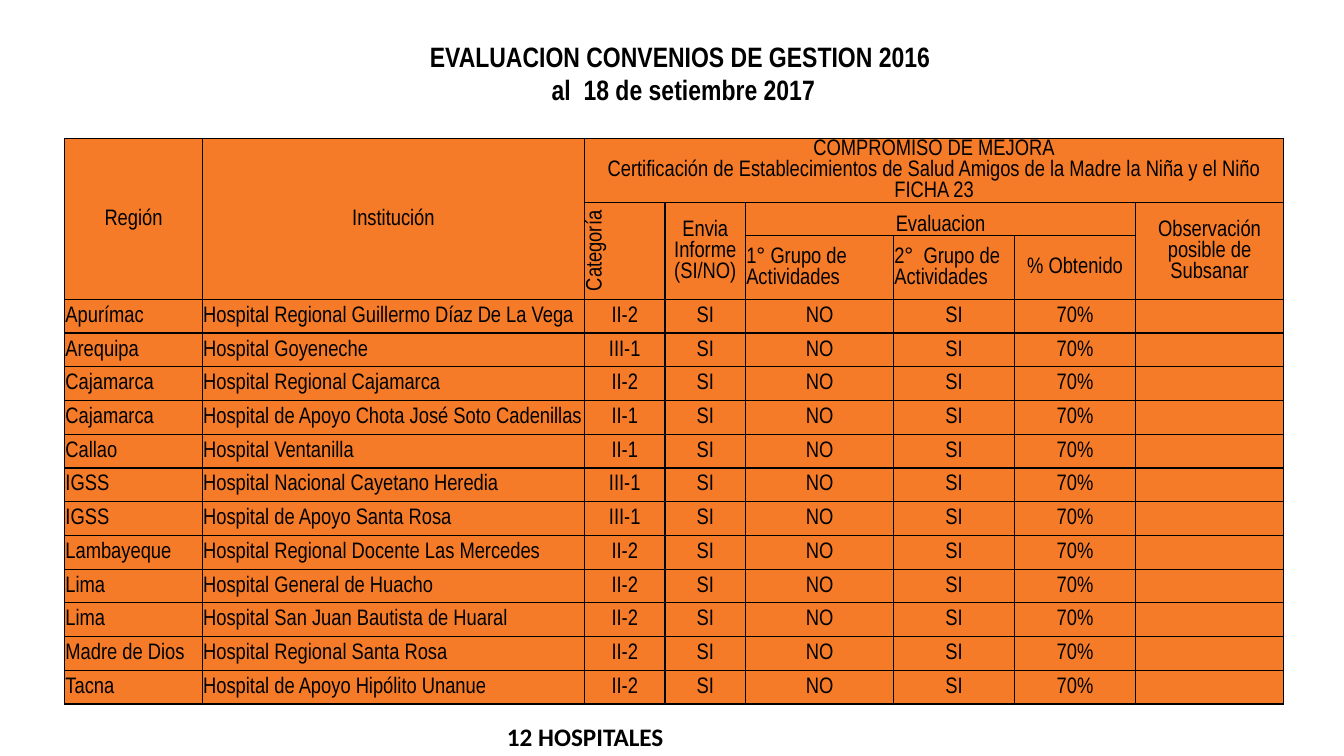
from lxml.etree import SubElement as Sub
from pptx import Presentation
from pptx.dml.color import RGBColor as Rgb
from pptx.enum.text import MSO_ANCHOR as Anchor, PP_ALIGN as Align
from pptx.oxml import parse_xml
from pptx.oxml.ns import nsdecls, qn
from pptx.util import Cm, Pt

COLORS = {"ink": "000000", "cell": "F57B28"}
NARROW = "Arial Narrow"
WIDTHS = [3.47, 9.63, 2.03, 2.03, 3.73, 3.05, 3.05, 3.73]
HEIGHTS = [1.6, 0.84, 1.6] + [0.85] * 12

# Header cells: row, column, rows spanned, columns spanned, text
HEADS = [
    (0, 0, 3, 1, "Región"),
    (0, 1, 3, 1, "Institución"),
    (0, 2, 1, 6, "COMPROMISO DE MEJORA\vCertificación de Establecimientos de Salud "
                 "Amigos de la Madre la Niña y el Niño\vFICHA 23"),
    (1, 2, 2, 1, "Categoría"),
    (1, 3, 2, 1, "Envia Informe\v(SI/NO)"),
    (1, 4, 1, 3, "Evaluacion"),
    (1, 7, 2, 1, "Observación posible de Subsanar"),
    (2, 4, 1, 1, "1° Grupo de Actividades"),
    (2, 5, 1, 1, "2°  Grupo de Actividades"),
    (2, 6, 1, 1, "% Obtenido"),
]
SITES = [
    ("Apurímac", "Hospital Regional Guillermo Díaz De La Vega", "II-2"),
    ("Arequipa", "Hospital Goyeneche", "III-1"),
    ("Cajamarca", "Hospital Regional Cajamarca", "II-2"),
    ("Cajamarca", "Hospital de Apoyo Chota José Soto Cadenillas", "II-1"),
    ("Callao", "Hospital Ventanilla", "II-1"),
    ("IGSS", "Hospital Nacional Cayetano Heredia", "III-1"),
    ("IGSS", "Hospital de Apoyo Santa Rosa", "III-1"),
    ("Lambayeque", "Hospital Regional Docente Las Mercedes", "II-2"),
    ("Lima", "Hospital General de Huacho", "II-2"),
    ("Lima", "Hospital San Juan Bautista de Huaral", "II-2"),
    ("Madre de Dios", "Hospital Regional Santa Rosa", "II-2"),
    ("Tacna", "Hospital de Apoyo Hipólito Unanue", "II-2"),
]
SCORES = ("SI", "NO", "SI", "70%", "")


def style(frame, size, font, bold=False, align=Align.CENTER):
    for para in frame.paragraphs:
        para.alignment = align
        para.line_spacing = 1.0
        para.space_before = Pt(0)
        for run in para.runs:
            run.font.size = Pt(size)
            run.font.name = font
            run.font.bold = bold
            run.font.color.rgb = Rgb.from_string(COLORS["ink"])


def place(shape, box):
    shape.left, shape.top, shape.width, shape.height = [Cm(n) for n in box]


def border(cell):
    props = cell._tc.get_or_add_tcPr()
    for spot, side in enumerate("LRTB"):
        line = parse_xml(f'<a:ln{side} {nsdecls("a")} w="12700"/>')
        fill = Sub(line, qn("a:solidFill"))
        Sub(fill, qn("a:srgbClr"), val=COLORS["ink"])
        props.insert(spot, line)


def dress(cell):
    cell.fill.solid()
    cell.fill.fore_color.rgb = Rgb.from_string(COLORS["cell"])
    cell.margin_left = cell.margin_right = cell.margin_top = Cm(0.02)
    cell.margin_bottom = 0
    cell.vertical_anchor = Anchor.MIDDLE
    border(cell)


def write(cell, text, align=Align.CENTER):
    cell.text_frame.text = text
    style(cell.text_frame, 16, NARROW, align=align)


def add_title(slide, box):
    title = slide.shapes.title
    place(title, box)
    frame = title.text_frame
    frame.text = "EVALUACION CONVENIOS DE GESTION 2016\n al  18 de setiembre 2017"
    frame.vertical_anchor = Anchor.TOP
    style(frame, 20, NARROW, bold=True)


def add_grid(slide, box):
    shape = slide.shapes.add_table(len(HEIGHTS), len(WIDTHS), *[Cm(n) for n in box])
    table = shape.table
    table.first_row = table.horz_banding = False
    for column, width in zip(table.columns, WIDTHS):
        column.width = Cm(width)
    for row, height in zip(table.rows, HEIGHTS):
        row.height = Cm(height)
    for cell in table.iter_cells():
        dress(cell)

    # Header block
    for row, col, down, across, text in HEADS:
        cell = table.cell(row, col)
        if down * across > 1:
            cell.merge(table.cell(row + down - 1, col + across - 1))
        left = text.endswith("Grupo de Actividades")
        write(cell, text, Align.LEFT if left else Align.CENTER)
        if across > 1:
            cell.vertical_anchor = Anchor.BOTTOM
        if text == "Categoría":
            cell._tc.get_or_add_tcPr().set("vert", "vert270")

    # One row per hospital
    for row, site in enumerate(SITES, 3):
        for col, text in enumerate(site + SCORES):
            write(table.cell(row, col), text, Align.LEFT if col < 2 else Align.CENTER)


def add_total(slide, box):
    frame = slide.shapes.add_textbox(*[Cm(n) for n in box]).text_frame
    frame.word_wrap = True
    frame.text = f"{len(SITES)} HOSPITALES"
    style(frame, 18, "Calibri", bold=True)


def main():
    deck = Presentation()
    deck.slide_width, deck.slide_height = Cm(33.87), Cm(19.05)
    slide = deck.slides.add_slide(deck.slide_layouts[5])
    add_title(slide, (6.93, 0.86, 20.42, 1.96))
    add_grid(slide, (1.63, 3.49, sum(WIDTHS), sum(HEIGHTS)))
    add_total(slide, (10.57, 18.06, 8.36, 1.04))
    deck.save("out.pptx")


if __name__ == "__main__":
    main()
